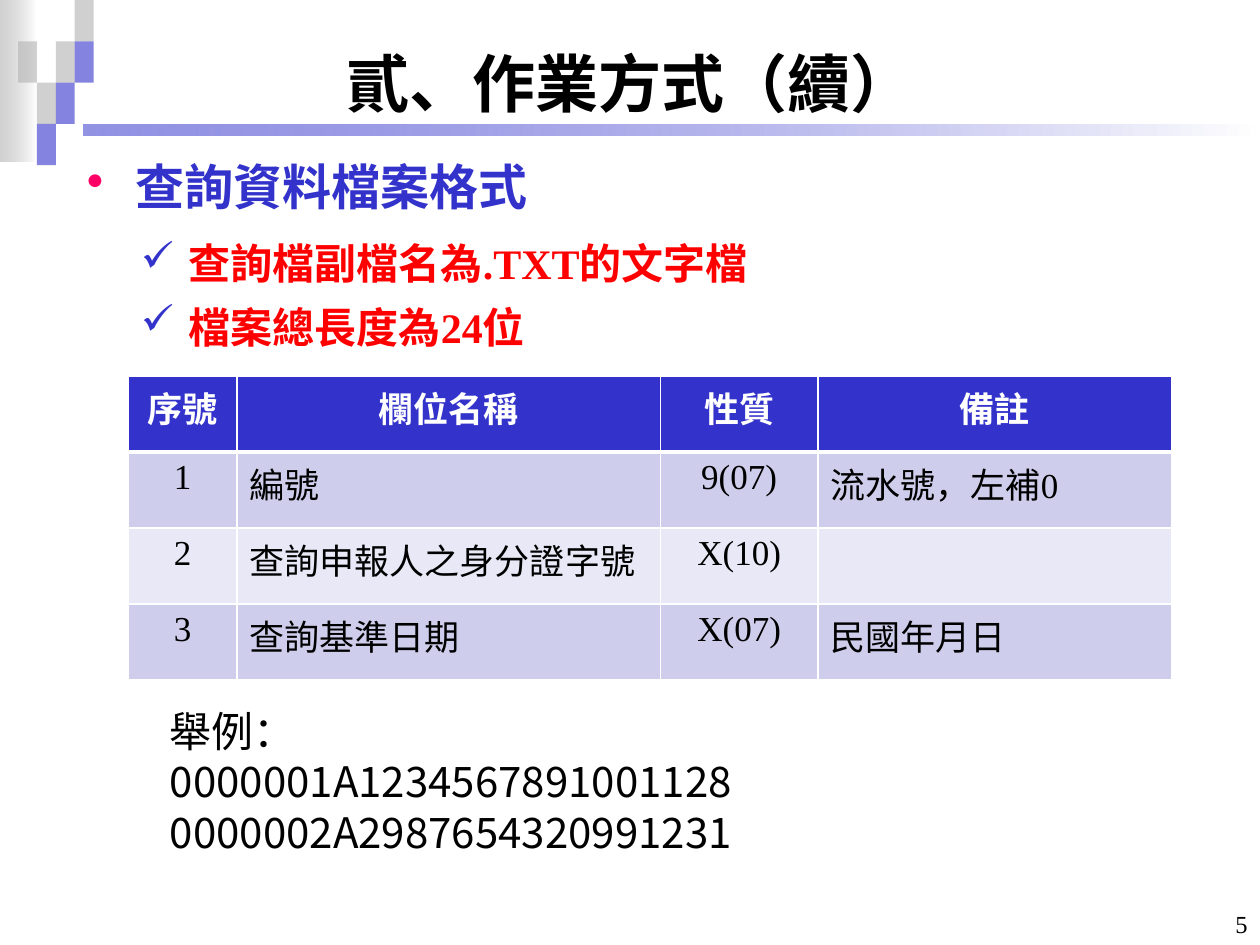
"""Build the slide on the query file format."""
from pptx import Presentation, util as u
from pptx.dml.color import RGBColor
from pptx.enum import shapes, text
from pptx.oxml import parse_xml
from pptx.oxml.ns import nsdecls, qn
from pptx.oxml.xmlchemy import OxmlElement

Pt = u.Pt
LEFT, CENTER, RIGHT = text.PP_ALIGN.LEFT, text.PP_ALIGN.CENTER, text.PP_ALIGN.RIGHT

THEME = {
    "latin": "Times New Roman", "cjk": "Noto Sans CJK SC",
    "ink": "000000", "white": "FFFFFF", "blue": "3333CC", "gray": "B2B2B2",
    "red": "FF0000", "pink": "FF0066", "bands": ("CECEEC", "E8E8F6"),
    "title": 36, "heading": 28, "body": 24, "cell": 20, "number": 14,
}
TITLE = "貳、作業方式（續）"
HEADING = ["查詢資料檔案格式"]
RULES = ["查詢檔副檔名為.TXT的文字檔", "檔案總長度為24位"]
FIELDS = [
    ("序號", "欄位名稱", "性質", "備註"),
    ("1", "編號", "9(07)", "流水號，左補0"),
    ("2", "查詢申報人之身分證字號", "X(10)", ""),
    ("3", "查詢基準日期", "X(07)", "民國年月日"),
]
FIELD_WIDTHS = (62, 242, 90, 202)
FIELD_ALIGNS = (CENTER, LEFT, CENTER, LEFT)
ROW_HEIGHT = 43.4
EXAMPLE = ["舉例：", "0000001A1234567891001128", "0000002A2987654320991231"]
PAGE = "5"
TILE_WIDTH, TILE_HEIGHT, TILE_LEFT = 10.8, 23.6, 10.3
TILES = [(0, 1, "gray"), (1, 2, "gray"), (1, 3, "blue"), (2, 1, "gray"),
         (2, 2, "blue"), (3, 0, "gray"), (3, 1, "blue")]


def rgb(value):
    return RGBColor.from_string(value)


def add_block(slide, box, color, alpha, fade=False):
    block = slide.shapes.add_shape(shapes.MSO_SHAPE.RECTANGLE, *map(Pt, box))
    block.shadow.inherit = False
    block.line.fill.background()
    if fade:
        block.fill.gradient()
        block.fill.gradient_angle = 0
        for stop, shade in zip(block.fill.gradient_stops, (color, THEME["white"])):
            stop.color.rgb = rgb(shade)
    else:
        block.fill.solid()
        block.fill.fore_color.rgb = rgb(color)
    opacity = OxmlElement("a:alpha")
    opacity.set("val", str(alpha * 1000))
    next(block._element.spPr.iter(qn("a:srgbClr"))).append(opacity)


def style(paragraph, size, color, bold=False, align=LEFT, latin=THEME["latin"]):
    paragraph.alignment = align
    for run in paragraph.runs:
        font = run.font
        font.size, font.bold, font.name = Pt(size), bold, latin
        font.color.rgb = rgb(color)
        east_asian = OxmlElement("a:ea")
        east_asian.set("typeface", THEME["cjk"])
        run._r.get_or_add_rPr().find(qn("a:latin")).addnext(east_asian)


def add_bullet(paragraph, mark, color, margin, indent):
    props = paragraph._p.get_or_add_pPr()
    props.set("marL", str(Pt(margin)))
    props.set("indent", str(-Pt(indent)))
    props.append(parse_xml(f'<a:buClr {nsdecls("a")}><a:srgbClr val="{color}"/></a:buClr>'))
    props.append(parse_xml(f'<a:buChar {nsdecls("a")} char="{mark}"/>'))


def add_lines(slide, box, lines, size, color, bullet=None,
              anchor=text.MSO_ANCHOR.TOP, **look):
    frame = slide.shapes.add_textbox(*map(Pt, box)).text_frame
    frame.word_wrap = True
    frame.vertical_anchor = anchor
    frame.text = "\n".join(lines)
    for order, paragraph in enumerate(frame.paragraphs):
        if bullet:
            paragraph.line_spacing = 1.1
            if order:
                paragraph.space_before = Pt(size * 0.2)
            add_bullet(paragraph, *bullet)
        style(paragraph, size, color, **look)


def add_borders(cell, bottom):
    props = cell._tc.get_or_add_tcPr()
    for order, (side, width) in enumerate((("L", 1), ("R", 1), ("T", 1), ("B", bottom))):
        props.insert(order, parse_xml(
            f'<a:ln{side} {nsdecls("a")} w="{Pt(width)}"><a:solidFill>'
            f'<a:srgbClr val="{THEME["white"]}"/></a:solidFill></a:ln{side}>'))


def add_fields(slide, left, top):
    table = slide.shapes.add_table(
        len(FIELDS), len(FIELD_WIDTHS), Pt(left), Pt(top),
        Pt(sum(FIELD_WIDTHS)), Pt(ROW_HEIGHT * len(FIELDS))).table
    for column, width in zip(table.columns, FIELD_WIDTHS):
        column.width = Pt(width)
    for r, field in enumerate(FIELDS):
        table.rows[r].height = Pt(ROW_HEIGHT)
        header = r == 0
        for c, value in enumerate(field):
            cell = table.cell(r, c)
            cell.text = value
            cell.fill.solid()
            cell.fill.fore_color.rgb = rgb(
                THEME["blue"] if header else THEME["bands"][(r - 1) % 2])
            add_borders(cell, 3 if header else 1)
            style(cell.text_frame.paragraphs[0], THEME["cell"],
                  THEME["white"] if header else THEME["ink"], bold=header,
                  align=CENTER if header else FIELD_ALIGNS[c])


def main():
    deck = Presentation()
    deck.slide_width, deck.slide_height = Pt(720), Pt(540)
    slide = deck.slides.add_slide(deck.slide_layouts[6])

    add_block(slide, (-1.4, 0, 22.3, 92.2), THEME["gray"], 60, fade=True)
    for column, row, color in TILES:
        add_block(slide, (TILE_LEFT + column * TILE_WIDTH, row * TILE_HEIGHT,
                          TILE_WIDTH, TILE_HEIGHT), THEME[color], 60)
    add_block(slide, (48, 71.3, 672, 6), THEME["blue"], 53, fade=True)

    add_lines(slide, (36, 21.6, 648, 90), [TITLE], THEME["title"], THEME["ink"],
              bold=True, align=CENTER)
    add_lines(slide, (42.5, 82.8, 652, 46.8), HEADING, THEME["heading"], THEME["blue"],
              bullet=("•", THEME["pink"], 28, 28), bold=True)
    add_lines(slide, (570, 516, 150, 24), [PAGE], THEME["number"], THEME["ink"],
              anchor=text.MSO_ANCHOR.MIDDLE, align=RIGHT)
    add_fields(slide, 73.4, 214.8)
    add_lines(slide, (44.6, 129.6, 652, 84.2), RULES, THEME["body"], THEME["red"],
              bullet=("✓", THEME["blue"], 56.2, 27.4), bold=True)
    add_lines(slide, (90, 399.6, 466, 106.6), EXAMPLE, THEME["body"], THEME["ink"],
              latin=THEME["cjk"])
    deck.save("out.pptx")


if __name__ == "__main__":
    main()
